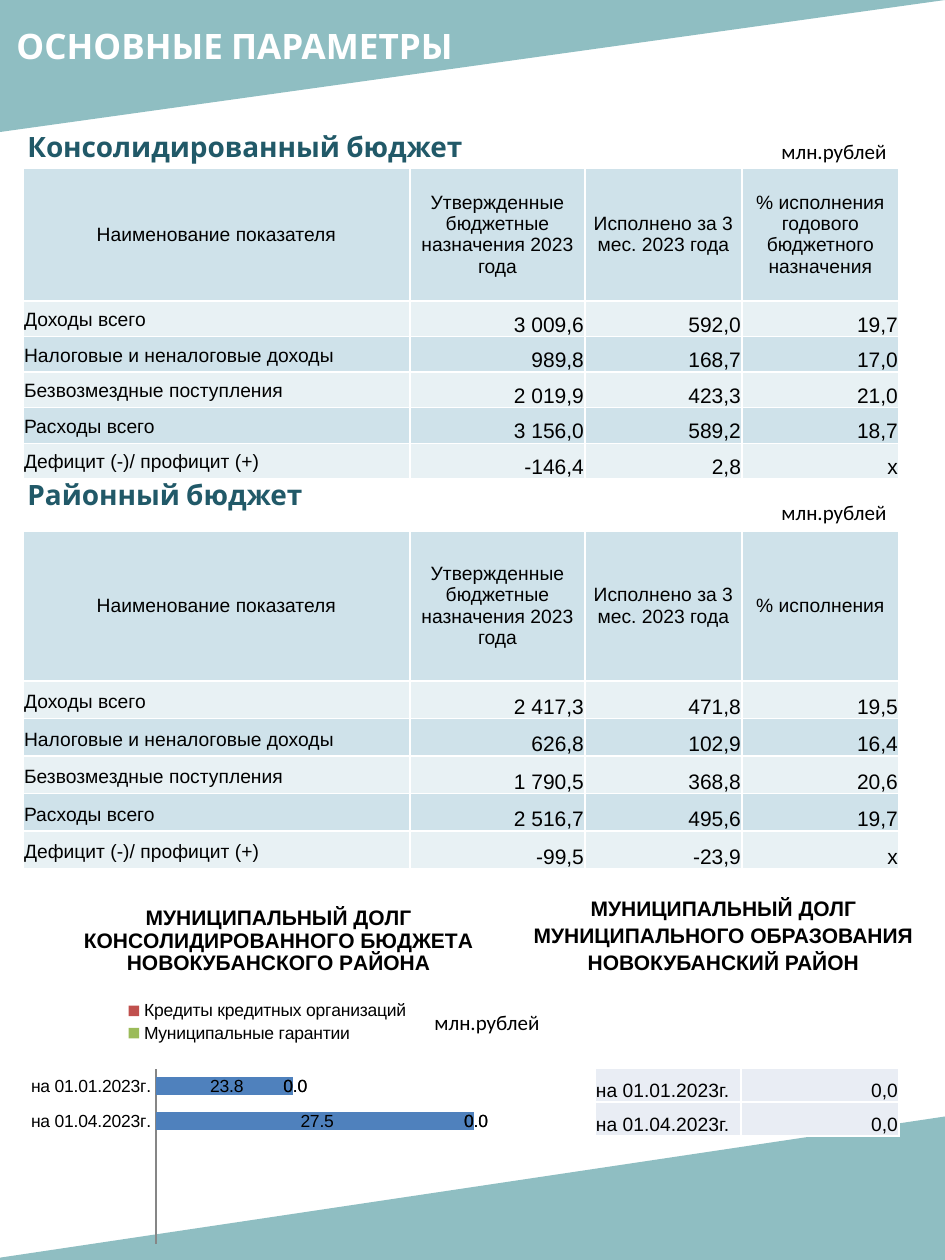
from lxml.etree import SubElement
from pptx import Presentation
from pptx.chart.data import CategoryChartData
from pptx.dml.color import RGBColor
from pptx.enum.chart import XL_CHART_TYPE, XL_LABEL_POSITION, XL_LEGEND_POSITION, XL_TICK_MARK
from pptx.enum.shapes import MSO_SHAPE
from pptx.enum.text import MSO_ANCHOR, MSO_AUTO_SIZE, PP_ALIGN
from pptx.oxml import parse_xml
from pptx.oxml.ns import nsdecls, qn
from pptx.util import Emu, Pt

EMU_PER_PX = 914400 / 126
BLACK, WHITE, TEAL, DARK_TEAL = "000000", "FFFFFF", "519AA0", "215968"
HEADER_FILL, LIGHT_FILL, DEBT_FILL = "CFE2EA", "E8F1F4", "E9EDF4"
NUMBER_FORMAT = r"#\ ##0.0"
LABEL_INSETS, NUMBER_INSETS = (1, 6, 1, 6), (1, 1, 1, 0)
DATES = ["на 01.01.2023г.", "на 01.04.2023г."]
HEADER = ["Наименование показателя", "Утвержденные бюджетные назначения 2023 года",
          "Исполнено за 3 мес. 2023 года"]
INDICATORS = ["Доходы всего", "Налоговые и неналоговые доходы",
              "Безвозмездные поступления", "Расходы всего", "Дефицит (-)/ профицит (+)"]
CONSOLIDATED = [("3 009,6", "592,0", "19,7"), ("989,8", "168,7", "17,0"),
                ("2 019,9", "423,3", "21,0"), ("3 156,0", "589,2", "18,7"),
                ("-146,4", "2,8", " х")]
DISTRICT = [("2 417,3", "471,8", "19,5"), ("626,8", "102,9", "16,4"),
            ("1 790,5", "368,8", "20,6"), ("2 516,7", "495,6", "19,7"),
            ("-99,5", "-23,9", " х")]


def px(length):
    return Emu(round(length * EMU_PER_PX))


def rgb(value):
    return RGBColor.from_string(value)


def add_run(paragraph, text, size, font="Arial", color=BLACK, bold=False):
    run = paragraph.add_run()
    run.text = text
    run.font.size, run.font.name, run.font.bold = Pt(size), font, bold
    run.font.color.rgb = rgb(color)


def add_wedge(slide, left, top, width, height, flip):
    shape = slide.shapes.add_shape(MSO_SHAPE.RIGHT_TRIANGLE, px(left), px(top), px(width), px(height))
    shape.rotation = 180
    shape.element.spPr.find(qn("a:xfrm")).set(flip, "1")
    shape.shadow.inherit = False
    shape.fill.solid()
    shape.fill.fore_color.rgb = rgb(TEAL)
    color = shape.element.spPr.find(qn("a:solidFill"))[0]
    SubElement(color, qn("a:alpha")).set("val", "64000")
    shape.line.fill.background()


def add_text(slide, left, top, width, height, text, size, font, color=BLACK,
             bold=False, wrap=True, align=PP_ALIGN.LEFT, spacing=None):
    box = slide.shapes.add_textbox(px(left), px(top), px(width), px(height))
    frame = box.text_frame
    frame.word_wrap = wrap
    frame.auto_size = MSO_AUTO_SIZE.SHAPE_TO_FIT_TEXT
    paragraph = frame.paragraphs[0]
    paragraph.alignment = align
    paragraph.line_spacing = spacing
    add_run(paragraph, text, size, font, color, bold)


def add_unit(slide, left, top):
    add_text(slide, left, top, 130, 38, "млн.рублей", 12, "Calibri", wrap=False)


def fill_cell(cell, text, size, fill, align, anchor, insets):
    cell.margin_left, cell.margin_top, cell.margin_right, cell.margin_bottom = map(px, insets)
    cell.vertical_anchor = anchor
    paragraph = cell.text_frame.paragraphs[0]
    paragraph.alignment = align
    add_run(paragraph, text, size)
    properties = cell._tc.get_or_add_tcPr()
    for side in ("lnL", "lnR", "lnT", "lnB"):
        properties.append(parse_xml(
            f'<a:{side} {nsdecls("a")} w="12700"><a:solidFill>'
            f'<a:srgbClr val="{WHITE}"/></a:solidFill></a:{side}>'))
    cell.fill.solid()
    cell.fill.fore_color.rgb = rgb(fill)


def add_grid(slide, left, top, widths, heights):
    table = slide.shapes.add_table(len(heights), len(widths), px(left), px(top),
                                   px(sum(widths)), px(sum(heights))).table
    table.first_row = table.horz_banding = False
    for column, width in zip(table.columns, widths):
        column.width = px(width)
    for row, height in zip(table.rows, heights):
        row.height = px(height)
    return table


def add_budget_table(slide, top, height, header_height, last_heading, values):
    row_height = (height - header_height) / len(values)
    table = add_grid(slide, 23, top, [387, 175, 157, 157],
                     [header_height] + [row_height] * len(values))
    for column, text in enumerate(HEADER + [last_heading]):
        fill_cell(table.cell(0, column), text, 11, HEADER_FILL,
                  PP_ALIGN.CENTER, MSO_ANCHOR.MIDDLE, LABEL_INSETS)
    for row, (indicator, numbers) in enumerate(zip(INDICATORS, values), 1):
        fill = LIGHT_FILL if row % 2 else HEADER_FILL
        fill_cell(table.cell(row, 0), indicator, 11, fill,
                  PP_ALIGN.LEFT, MSO_ANCHOR.BOTTOM, LABEL_INSETS)
        for column, number in enumerate(numbers, 1):
            fill_cell(table.cell(row, column), number, 12, fill,
                      PP_ALIGN.RIGHT, MSO_ANCHOR.BOTTOM, NUMBER_INSETS)


def add_debt_table(slide):
    table = add_grid(slide, 595, 1068, [146, 158], [34, 34])
    for row, date in enumerate(DATES):
        for column, (text, align) in enumerate([(date, PP_ALIGN.LEFT), ("0,0", PP_ALIGN.RIGHT)]):
            fill_cell(table.cell(row, column), text, 11, DEBT_FILL, align,
                      MSO_ANCHOR.BOTTOM, NUMBER_INSETS)


def set_layout(element, target=None, **fractions):
    """Place a chart part by fractions of the chart's size."""
    for layout in element.findall(qn("c:layout")):
        element.remove(layout)
    parts = f'<c:layoutTarget val="{target}"/>' if target else ""
    parts += "".join(f'<c:{key}Mode val="edge"/>' for key in "xy")
    parts += "".join(f'<c:{key} val="{value}"/>' for key, value in fractions.items())
    layout = parse_xml(f'<c:layout {nsdecls("c")}><c:manualLayout>{parts}'
                       '</c:manualLayout></c:layout>')
    overlay = element.find(qn("c:overlay"))
    element.insert(0 if overlay is None else element.index(overlay), layout)


def add_debt_chart(slide):
    data = CategoryChartData(number_format=NUMBER_FORMAT)
    data.categories = DATES + [""] * 3
    series_colors = {"4F81BD": ("Бюджетные кредиты", 23.8, 27.5),
                     "C0504D": ("Кредиты кредитных организаций", 0, 0),
                     "9BBB59": ("Муниципальные гарантии", 0, 0)}
    for name, *values in series_colors.values():
        data.add_series(name, values + [None] * 3)
    chart = slide.shapes.add_chart(XL_CHART_TYPE.BAR_STACKED, px(4), px(870),
                                   px(543), px(390), data).chart
    chart.font.size, chart.font.name = Pt(10), "Arial"
    chart.font.color.rgb = rgb(BLACK)

    # Title and legend
    chart.has_title = True
    paragraph = chart.chart_title.text_frame.paragraphs[0]
    add_run(paragraph, "МУНИЦИПАЛЬНЫЙ ДОЛГ КОНСОЛИДИРОВАННОГО БЮДЖЕТА НОВОКУБАНСКОГО РАЙОНА",
            12, bold=True)
    set_layout(chart.chart_title._element, x=0.14, y=0.08)
    chart.has_legend = True
    chart.legend.position = XL_LEGEND_POSITION.TOP
    chart.legend.include_in_layout = False
    legend = chart.legend._element
    legend.insert(1, parse_xml(f'<c:legendEntry {nsdecls("c")}><c:idx val="2"/>'
                               '<c:delete val="1"/></c:legendEntry>'))
    set_layout(legend, x=0.21, y=0.33, w=0.55, h=0.12)

    # Axes
    axis = chart.category_axis
    axis.reverse_order = True
    axis.major_tick_mark = XL_TICK_MARK.NONE
    axis.format.line.color.rgb = rgb("868686")
    axis = chart.value_axis
    axis.minimum_scale, axis.maximum_scale = 21, 28
    axis.has_major_gridlines = False
    axis.visible = False

    # Bars and their values
    plot = chart.plots[0]
    plot.gap_width, plot.overlap, plot.vary_by_categories = 95, 100, False
    for series, color in zip(plot.series, series_colors):
        series.format.fill.solid()
        series.format.fill.fore_color.rgb = rgb(color)
        labels = series.data_labels
        labels.show_value = True
        labels.position = XL_LABEL_POSITION.CENTER
        labels.number_format, labels.number_format_is_linked = NUMBER_FORMAT, False
    plot_area = chart.element.find(".//" + qn("c:plotArea"))
    set_layout(plot_area, "inner", x=0.28, y=0.51, w=0.63, h=0.45)


def main():
    presentation = Presentation()
    presentation.slide_width, presentation.slide_height = px(945), px(1260)
    slide = presentation.slides.add_slide(presentation.slide_layouts[6])

    # Corner wedges
    add_wedge(slide, 0, 0, 945, 132, "flipH")
    add_wedge(slide, -16, 1116, 964, 144, "flipV")

    # Headings and units
    for left, top, height, text, size, color in [
            (4, 18, 54, "ОСНОВНЫЕ ПАРАМЕТРЫ", 20, WHITE),
            (15, 123, 45, "Консолидированный бюджет", 16, DARK_TEAL),
            (15, 471, 45, "Районный бюджет", 16, DARK_TEAL)]:
        add_text(slide, left, top, 614, height, text, size, "Cabin", color, bold=True)
    for left, top in [(769, 132), (769, 493), (422, 1003)]:
        add_unit(slide, left, top)

    # Budget tables
    add_budget_table(slide, 168, 311, 133, "% исполнения годового бюджетного назначения",
                     CONSOLIDATED)
    add_budget_table(slide, 531, 338, 150, "% исполнения", DISTRICT)

    # Municipal debt
    add_text(slide, 489, 888, 469, 115,
             "МУНИЦИПАЛЬНЫЙ ДОЛГ МУНИЦИПАЛЬНОГО ОБРАЗОВАНИЯ НОВОКУБАНСКИЙ РАЙОН",
             12, "Arial", bold=True, align=PP_ALIGN.CENTER, spacing=1.06)
    add_debt_table(slide)
    add_debt_chart(slide)
    presentation.save("out.pptx")


if __name__ == "__main__":
    main()
